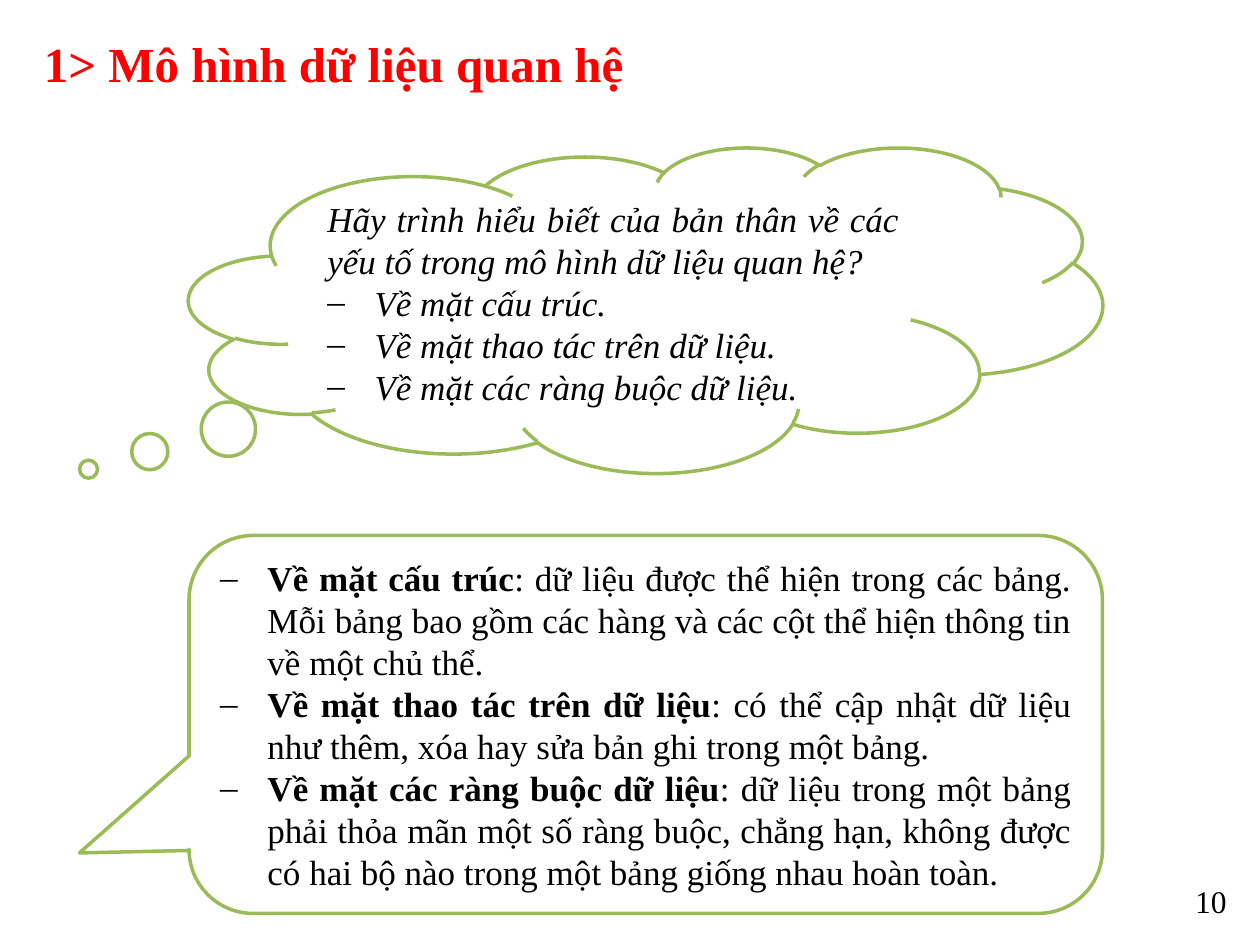
from lxml.etree import SubElement
from pptx import Presentation
from pptx.dml.color import RGBColor
from pptx.enum.shapes import MSO_SHAPE as Shape
from pptx.enum.text import MSO_ANCHOR as Anchor, PP_ALIGN as Align
from pptx.oxml.ns import qn
from pptx.util import Pt

INDENT = 27
QUESTION = "Hãy trình hiểu biết của bản thân về các yếu tố trong mô hình dữ liệu quan hệ?"
ANSWERS = {
    "Về mặt cấu trúc": "dữ liệu được thể hiện trong các bảng. Mỗi bảng bao gồm "
                       "các hàng và các cột thể hiện thông tin về một chủ thể.",
    "Về mặt thao tác trên dữ liệu": "có thể cập nhật dữ liệu như thêm, xóa hay sửa "
                                    "bản ghi trong một bảng.",
    "Về mặt các ràng buộc dữ liệu": "dữ liệu trong một bảng phải thỏa mãn một số ràng "
                                    "buộc, chẳng hạn, không được có hai bộ nào trong "
                                    "một bảng giống nhau hoàn toàn.",
}


def color(value):
    return RGBColor.from_string(value)


def add_dash(paragraph):
    """Give the paragraph a hanging dash bullet."""
    properties = paragraph._p.get_or_add_pPr()
    properties.set("marL", str(Pt(INDENT)))
    properties.set("indent", str(-Pt(INDENT)))
    SubElement(properties, qn("a:buFont"), typeface="Times New Roman")
    SubElement(properties, qn("a:buChar"), char="‒")


class SlideBuilder:
    font = "Times New Roman"
    text_color = "000000"
    fill = "FFFFFF"
    line = "9BBB59"
    line_width = 2

    def __init__(self, slide):
        self.slide = slide

    def add_text(self, paragraph, text, **formats):
        run = paragraph.add_run()
        run.text = text
        run.font.color.rgb = color(formats.pop("color", self.text_color))
        for name, value in {"name": self.font, "size": Pt(20), **formats}.items():
            setattr(run.font, name, value)

    def text_box(self, box, text, align, anchor, **formats):
        frame = self.slide.shapes.add_textbox(*map(Pt, box)).text_frame
        frame.word_wrap = True
        frame.vertical_anchor = anchor
        paragraph = frame.paragraphs[0]
        paragraph.alignment = align
        self.add_text(paragraph, text, **formats)

    def callout(self, kind, box, adjustments, paragraphs):
        """Draw a callout; each paragraph is (has a dash, [(text, formats), ...])."""
        shape = self.slide.shapes.add_shape(kind, *map(Pt, box))
        shape.shadow.inherit = False
        for index, value in enumerate(adjustments):
            shape.adjustments[index] = value
        shape.fill.solid()
        shape.fill.fore_color.rgb = color(self.fill)
        shape.line.color.rgb = color(self.line)
        shape.line.width = Pt(self.line_width)
        frame = shape.text_frame
        frame.word_wrap = True
        frame.vertical_anchor = Anchor.MIDDLE
        for index, (dashed, runs) in enumerate(paragraphs):
            paragraph = frame.add_paragraph() if index else frame.paragraphs[0]
            paragraph.alignment = Align.JUSTIFY
            if dashed:
                add_dash(paragraph)
            for text, formats in runs:
                self.add_text(paragraph, text, **formats)


def main():
    presentation = Presentation()
    presentation.slide_width, presentation.slide_height = Pt(720), Pt(540)
    builder = SlideBuilder(presentation.slides.add_slide(presentation.slide_layouts[6]))

    builder.text_box((18, 9, 624, 54), "1> Mô hình dữ liệu quan hệ", Align.JUSTIFY,
                     Anchor.MIDDLE, size=Pt(28), bold=True, color="FF0000")
    builder.text_box((540, 500.4, 168, 28.8), "10", Align.RIGHT, Anchor.TOP, size=Pt(18))

    italic = {"italic": True}
    question = [(False, [(QUESTION, italic)])]
    question += [(True, [(f"{aspect}.", italic)]) for aspect in ANSWERS]
    builder.callout(Shape.CLOUD_CALLOUT, (108, 84, 522, 186), (-0.61, 0.49), question)

    answers = [(True, [(aspect, {"bold": True}), (f": {answer}", {})])
               for aspect, answer in ANSWERS.items()]
    builder.callout(Shape.ROUNDED_RECTANGULAR_CALLOUT, (108, 306, 522, 216),
                    (-0.62, 0.34, 0.17), answers)

    presentation.save("out.pptx")


if __name__ == "__main__":
    main()
